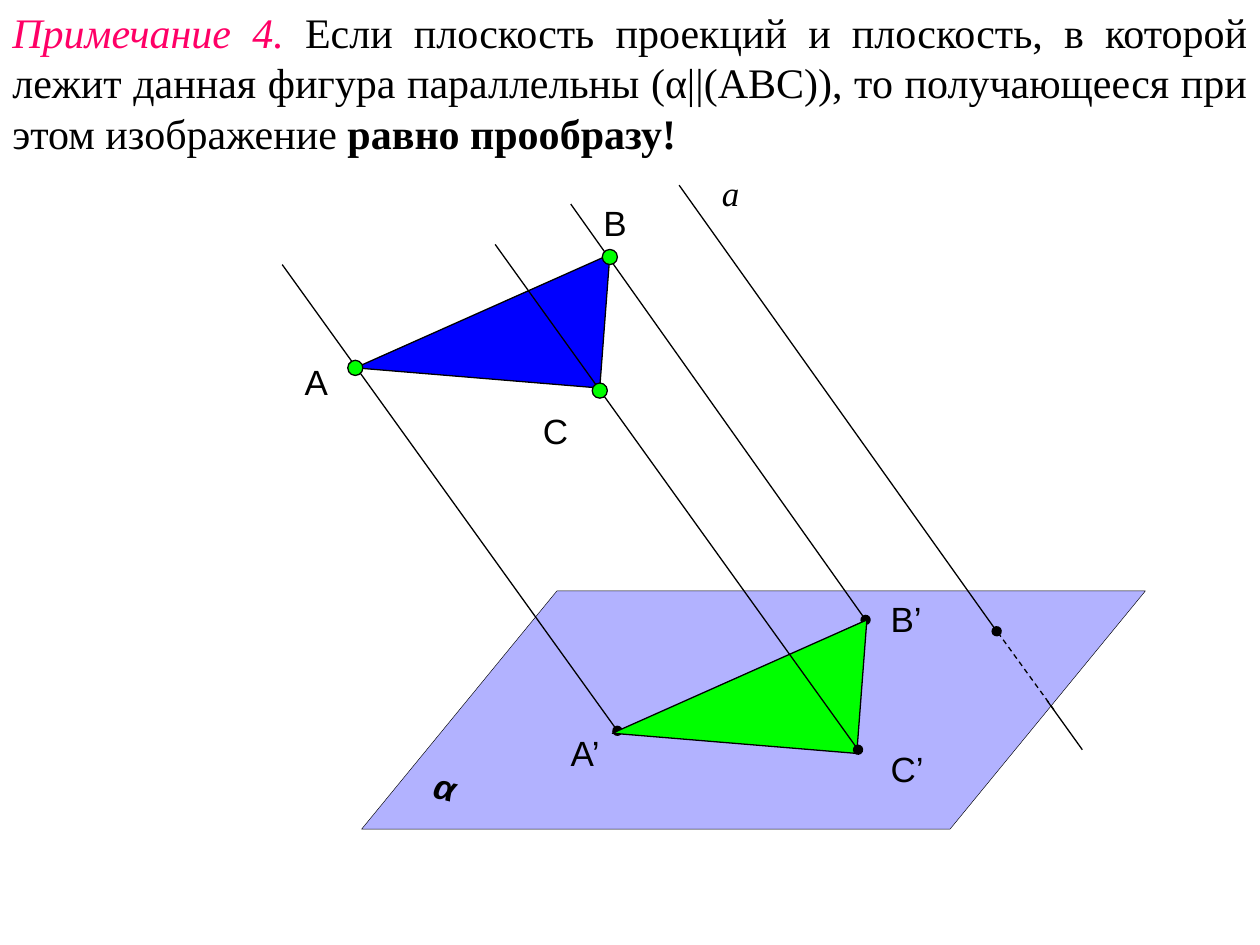
from lxml.etree import SubElement
from pptx import Presentation
from pptx.dml.color import RGBColor
from pptx.enum.dml import MSO_LINE
from pptx.enum.shapes import MSO_CONNECTOR, MSO_SHAPE
from pptx.enum.text import MSO_AUTO_SIZE, PP_ALIGN
from pptx.oxml.ns import qn
from pptx.util import Pt

EMU_PER_PX = 9144  # 100 px to the inch

BLACK = RGBColor(0x00, 0x00, 0x00)
BLUE = RGBColor(0x00, 0x00, 0xFF)
GREEN = RGBColor(0x00, 0xFF, 0x00)
PINK = RGBColor(0xFF, 0x00, 0x66)

SERIF = "Times New Roman"
SANS = "Arial"


def emu(*lengths):
    return [length * EMU_PER_PX for length in lengths]


class Drawing:
    """Adds styled elements to one slide, with lengths in px."""

    line_width = 0.75
    label_size = 20
    dot_size = 12

    def __init__(self, slide):
        self.shapes = slide.shapes

    def paint(self, shape, color, line_width=line_width):
        shape.shadow.inherit = False
        shape.fill.solid()
        shape.fill.fore_color.rgb = color
        shape.line.color.rgb = BLACK
        shape.line.width = Pt(line_width)

    def plane(self, left, top, width, height, slant, opacity):
        plane = self.shapes.add_shape(
            MSO_SHAPE.PARALLELOGRAM, *emu(left, top, width, height))
        plane.adjustments[0] = slant
        self.paint(plane, BLUE, 0.25)
        color = plane.fill._xPr.find(qn("a:solidFill"))[0]
        SubElement(color, qn("a:alpha"), val=str(opacity * 1000))

    def triangle(self, corners, color):
        builder = self.shapes.build_freeform(*corners[0], scale=EMU_PER_PX)
        builder.add_line_segments(corners[1:], close=True)
        self.paint(builder.convert_to_shape(), color)

    def dot(self, left, top):
        self.paint(self.shapes.add_shape(
            MSO_SHAPE.OVAL, *emu(left, top, self.dot_size, self.dot_size)), GREEN)

    def ray(self, start, end, meets_plane=True, dashed=False):
        ray = self.shapes.add_connector(
            MSO_CONNECTOR.STRAIGHT, *emu(*start, *end))
        ray.line.color.rgb = BLACK
        ray.line.width = Pt(self.line_width)
        if dashed:
            ray.line.dash_style = MSO_LINE.DASH
        if meets_plane:
            SubElement(ray.line._get_or_add_ln(), qn("a:tailEnd"), type="oval")
        SubElement(ray._element.spPr, qn("a:effectLst"))

    def text(self, left, top, width, height, runs, size, font):
        """Add a text box; runs are (wording, color, bold, italic)."""
        box = self.shapes.add_textbox(*emu(left, top, width, height))
        frame = box.text_frame
        frame.word_wrap = True
        frame.auto_size = MSO_AUTO_SIZE.SHAPE_TO_FIT_TEXT
        for wording, color, bold, italic in runs:
            run = frame.paragraphs[0].add_run()
            run.text = wording
            run.font.name = font
            run.font.size = Pt(size)
            run.font.color.rgb = color
            run.font.bold = bold
            run.font.italic = italic
        return box

    def label(self, wording, left, top, width=47, font=SANS, bold=False, italic=False):
        return self.text(left, top, width, 43, [(wording, BLACK, bold, italic)],
                         self.label_size, font)


def main():
    presentation = Presentation()
    presentation.slide_width, presentation.slide_height = emu(1000, 750)
    drawing = Drawing(presentation.slides.add_slide(presentation.slide_layouts[6]))

    figure = [(282, 292), (484, 202), (476, 308)]
    projection = [(x + 204, y + 290) for x, y in figure]

    drawing.plane(287, 469, 622, 189, slant=0.82, opacity=30)
    drawing.ray((453, 162), (687, 492))
    drawing.triangle(figure, BLUE)

    note = drawing.text(0, 0, 1000, 131, [
        ("Примечание 4.", PINK, False, True),
        (" Если плоскость проекций и плоскость, в которой лежит данная фигура "
         "параллельны (α||(АВС)), то получающееся при этом изображение ",
         BLACK, False, False),
        ("равно прообразу!", BLACK, True, False),
    ], 24, SERIF)
    note.text_frame.paragraphs[0].alignment = PP_ALIGN.JUSTIFY

    drawing.ray((224, 210), (490, 580))
    drawing.ray((539, 147), (791, 501))
    drawing.ray((792, 502), (837, 564), meets_plane=False, dashed=True)
    drawing.ray((831, 556), (859, 595), meets_plane=False)

    drawing.label("а", 563, 131, width=32, font=SERIF, italic=True)
    plane_name = drawing.label("α", 335, 603, width=41, bold=True, italic=True)
    plane_name.rotation = 13.8
    for vertex, left, top in [
        ("А", 232, 281), ("B", 469, 155), ("C", 421, 320),
        ("А’", 443, 576), ("B’", 697, 469), ("C’", 697, 588),
    ]:
        drawing.label(vertex, left, top)

    drawing.triangle(projection, GREEN)
    drawing.ray((393, 194), (681, 595))
    for left, top in [(470, 304), (276, 286), (478, 198)]:
        drawing.dot(left, top)

    presentation.save("out.pptx")


if __name__ == "__main__":
    main()
